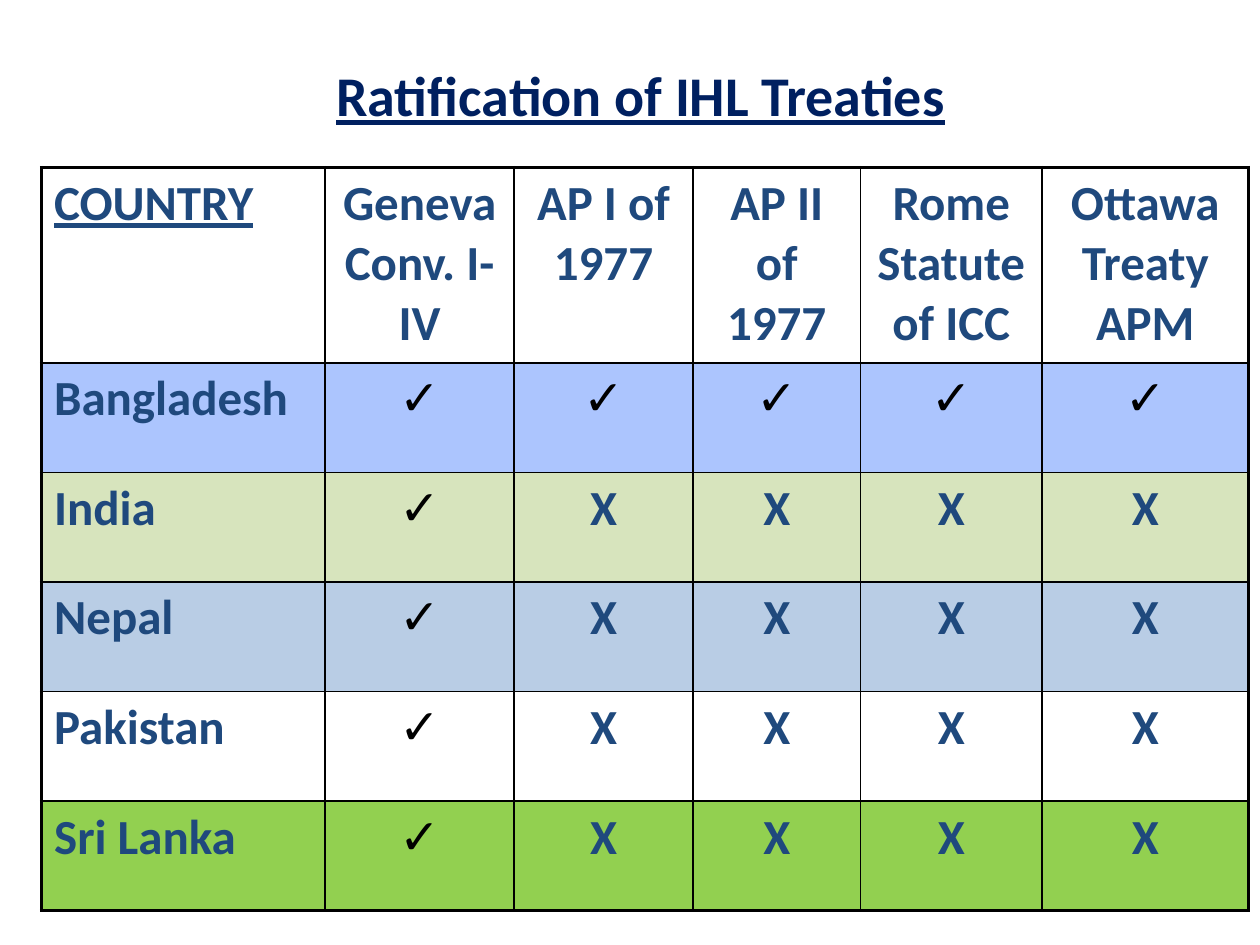
"""Build a slide with a table of IHL treaty ratifications by country."""
from dataclasses import dataclass
from typing import Optional

from lxml import etree
from pptx import Presentation
from pptx import util as u
from pptx.dml.color import RGBColor
from pptx.enum import text
from pptx.oxml import ns

NAVY = RGBColor(0x00, 0x20, 0x60)
BLUE = RGBColor(0x1F, 0x49, 0x7D)
BLACK = RGBColor(0x00, 0x00, 0x00)
WHITE = RGBColor(0xFF, 0xFF, 0xFF)
PERIWINKLE = RGBColor(0xAC, 0xC5, 0xFE)
SAGE = RGBColor(0xD7, 0xE4, 0xBD)
PALE_BLUE = RGBColor(0xB9, 0xCD, 0xE5)
GREEN = RGBColor(0x92, 0xD0, 0x50)

FONT_NAME = "Calibri"
YES, NO = "✓", "X"
OUTER_WIDTH, INNER_WIDTH = 2.25, 1
COLUMN_WIDTHS = (2.25, 1.5, 1.42, 1.33, 1.44, 1.64)
HEADER_HEIGHT, COUNTRY_HEIGHT = 1.55, 0.87


@dataclass(frozen=True)
class TableRow:
    """One table row: its cell texts, fill and height in inches."""

    texts: tuple[str, ...]
    fill: Optional[RGBColor]
    height: float = COUNTRY_HEIGHT


ONLY_GENEVA = (YES,) + (NO,) * 4
ROWS = (
    TableRow(
        ("COUNTRY", "Geneva Conv. I-IV", "AP I of 1977", "AP II of 1977",
         "Rome Statute of ICC", "Ottawa Treaty APM"),
        WHITE,
        HEADER_HEIGHT,
    ),
    TableRow(("Bangladesh",) + (YES,) * 5, PERIWINKLE),
    TableRow(("India",) + ONLY_GENEVA, SAGE),
    TableRow(("Nepal",) + ONLY_GENEVA, PALE_BLUE),
    TableRow(("Pakistan",) + ONLY_GENEVA, None),
    TableRow(("Sri Lanka",) + ONLY_GENEVA, GREEN),
)


def write_text(paragraph, content: str, alignment, color: RGBColor, **format_values) -> None:
    """Put one formatted run into a paragraph."""
    paragraph.alignment = alignment
    run = paragraph.add_run()
    run.text = content
    run.font.color.rgb = color
    for name, value in {"name": FONT_NAME, **format_values}.items():
        setattr(run.font, name, value)


def set_borders(cell, widths: dict[str, float]) -> None:
    """Draw black cell borders, with widths in points by side."""
    properties = cell._tc.get_or_add_tcPr()
    for index, (side, width) in enumerate(widths.items()):
        line = etree.Element(ns.qn(f"a:ln{side}"), w=str(u.Pt(width)))
        fill = etree.SubElement(line, ns.qn("a:solidFill"))
        etree.SubElement(fill, ns.qn("a:srgbClr"), val=str(BLACK))
        properties.insert(index, line)


def add_title(slide, content: str) -> None:
    """Add the underlined slide title."""
    shape = slide.shapes.add_textbox(
        u.Inches(0.67), u.Inches(0.25), u.Inches(8.83), u.Inches(1)
    )
    frame = shape.text_frame
    frame.word_wrap = True
    frame.vertical_anchor = text.MSO_ANCHOR.MIDDLE
    write_text(frame.paragraphs[0], content, text.PP_ALIGN.CENTER, NAVY,
               size=u.Pt(32), bold=True, underline=True)


def fill_cell(cell, row: TableRow, row_index: int, column_index: int) -> None:
    """Write and style one cell by its place in the table."""
    content = row.texts[column_index]
    checked = content == YES
    alignment = text.PP_ALIGN.CENTER if column_index else text.PP_ALIGN.LEFT
    write_text(cell.text_frame.paragraphs[0], content, alignment,
               BLACK if checked else BLUE, size=u.Pt(28), bold=not checked,
               underline=row_index == column_index == 0)
    if row.fill is None:
        cell.fill.background()
    else:
        cell.fill.solid()
        cell.fill.fore_color.rgb = row.fill
    on_edge = {
        "L": column_index == 0,
        "R": column_index == len(COLUMN_WIDTHS) - 1,
        "T": row_index == 0,
        "B": row_index == len(ROWS) - 1,
    }
    set_borders(cell, {side: OUTER_WIDTH if edge else INNER_WIDTH
                       for side, edge in on_edge.items()})


def add_treaty_table(slide) -> None:
    """Add the table of countries and treaties."""
    table = slide.shapes.add_table(
        len(ROWS), len(COLUMN_WIDTHS), u.Inches(0.33), u.Inches(1.33),
        u.Inches(sum(COLUMN_WIDTHS)), u.Inches(sum(row.height for row in ROWS)),
    ).table
    table.first_row = table.horz_banding = False
    for column, width in zip(table.columns, COLUMN_WIDTHS):
        column.width = u.Inches(width)
    for row_index, row in enumerate(ROWS):
        table.rows[row_index].height = u.Inches(row.height)
        for column_index in range(len(COLUMN_WIDTHS)):
            fill_cell(table.cell(row_index, column_index), row, row_index, column_index)


def main() -> None:
    """Build and save the presentation."""
    presentation = Presentation()
    presentation.slide_width = u.Inches(10)
    presentation.slide_height = u.Inches(7.5)
    slide = presentation.slides.add_slide(presentation.slide_layouts[6])
    add_title(slide, "Ratification of IHL Treaties")
    add_treaty_table(slide)
    presentation.save("out.pptx")


if __name__ == "__main__":
    main()
